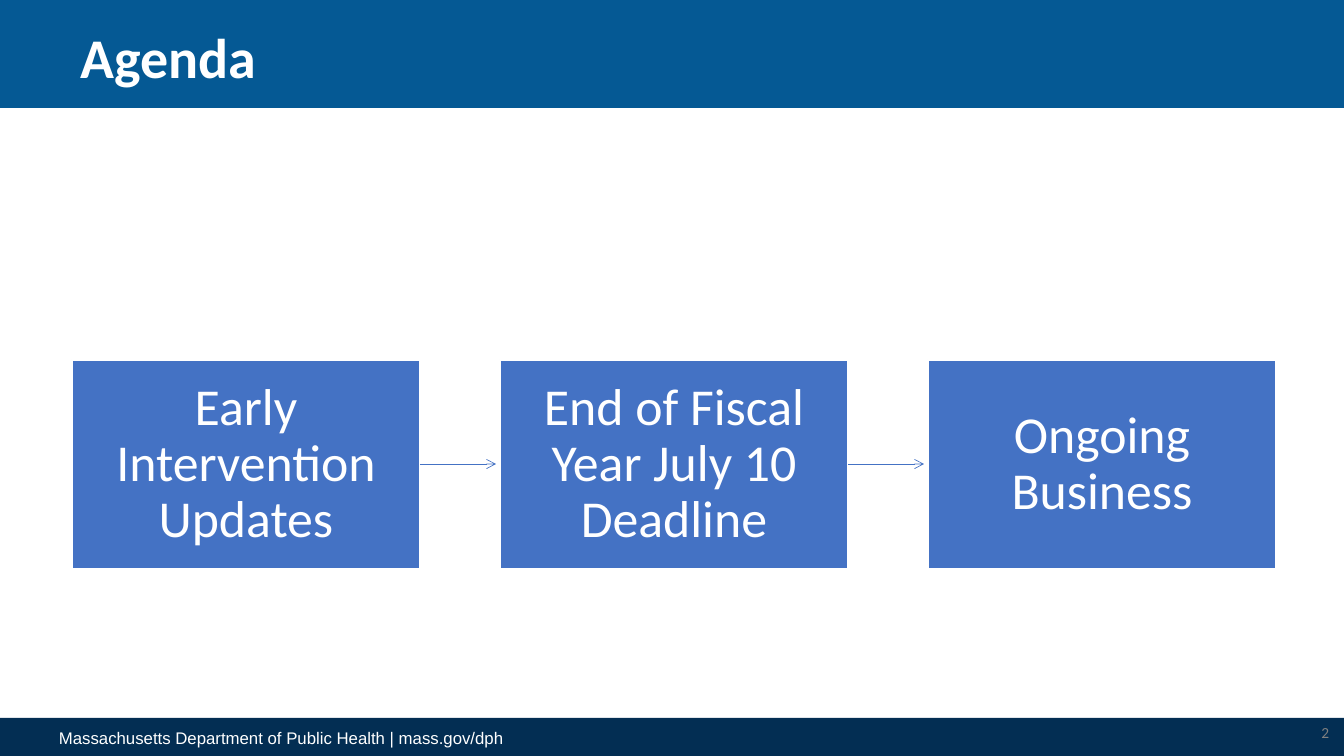
from dataclasses import dataclass

from pptx import Presentation
from pptx import util as u
from pptx.dml.color import RGBColor
from pptx.enum import shapes, text
from pptx.oxml.ns import qn
from lxml import etree

SCALE = 914400 / 100.8


@dataclass(frozen=True)
class Theme:
    header: str = "055994"
    footer: str = "032E53"
    step: str = "4472C4"
    light: str = "FFFFFF"
    muted: str = "808080"
    title_size: int = 40
    step_size: int = 37
    footer_size: int = 12
    number_size: int = 11
    body_font: str = "Calibri"
    footer_font: str = "Arial"


THEME = Theme()


def px(*lengths):
    return [round(n * SCALE) for n in lengths]


def rgb(value):
    return RGBColor.from_string(value)


def set_all(target, values):
    for name, value in values.items():
        setattr(target, name, value)


def add_rect(slide, box, fill, line=None):
    sp = slide.shapes.add_shape(shapes.MSO_SHAPE.RECTANGLE, *px(*box))
    sp.shadow.inherit = False
    sp.fill.solid()
    sp.fill.fore_color.rgb = rgb(fill)
    if line:
        sp.line.color.rgb = rgb(line)
        sp.line.width = u.Pt(1)
    else:
        sp.line.fill.background()
    return sp


def write(sp, words, size, color, font=THEME.body_font, bold=False,
          frame=None, para=None):
    tf = sp.text_frame
    set_all(tf, {"word_wrap": True,
                 "vertical_anchor": text.MSO_ANCHOR.MIDDLE, **(frame or {})})
    p = tf.paragraphs[0]
    set_all(p, para or {})
    r = p.add_run()
    r.text = words
    set_all(r.font, {"name": font, "size": u.Pt(size), "bold": bold})
    r.font.color.rgb = rgb(color)


def add_label(slide, box, words, size, color, **style):
    write(slide.shapes.add_textbox(*px(*box)), words, size, color, **style)


def add_arrow(slide, x, y, length):
    line = slide.shapes.add_connector(
        shapes.MSO_CONNECTOR.STRAIGHT, *px(x, y, x + length, y))
    line.line.color.rgb = rgb(THEME.step)
    line.line.width = u.Pt(0.5)
    etree.SubElement(line.line._get_or_add_ln(), qn("a:tailEnd"), type="arrow")
    etree.SubElement(line._element.spPr, qn("a:effectLst"))


def add_header(slide, box, title):
    x, y, w, h = box
    add_rect(slide, box, THEME.header)
    add_label(slide, (x + 71, y + 12, 1107, 97), title, THEME.title_size,
              THEME.light, bold=True, para={"line_spacing": 0.9})


def add_footer(slide, box, words, number):
    x, y, w, h = box
    add_rect(slide, box, THEME.footer)
    add_label(slide, (x + 49, y + 4, 555, 31), words, THEME.footer_size,
              THEME.light, font=THEME.footer_font)
    add_label(slide, (x + w - 54, y - 6, 49, 40), number, THEME.number_size,
              THEME.muted, para={"alignment": text.PP_ALIGN.RIGHT,
                                 "space_after": u.Pt(6)})


def add_steps(slide, box, steps, gap):
    x, y, w, h = box
    width = (w - gap * (len(steps) - 1)) // len(steps)
    side, edge = px(17, 18)
    frame = {"margin_left": side, "margin_right": side,
             "margin_top": edge, "margin_bottom": edge}
    para = {"alignment": text.PP_ALIGN.CENTER, "line_spacing": 0.9}
    for i, words in enumerate(steps):
        left = x + i * (width + gap)
        if i:
            add_arrow(slide, left - gap, y + h // 2, gap - 4)
        sp = add_rect(slide, (left, y, width, h), THEME.step, THEME.light)
        write(sp, words, THEME.step_size, THEME.light, frame=frame, para=para)


def main():
    prs = Presentation()
    prs.slide_width, prs.slide_height = px(1344, 756)
    slide = prs.slides.add_slide(prs.slide_layouts[6])
    add_header(slide, (0, 0, 1344, 108), "Agenda")
    add_steps(slide, (72, 360, 1204, 209),
              ["Early Intervention Updates",
               "End of Fiscal Year July 10 Deadline",
               "Ongoing Business"], gap=80)
    add_footer(slide, (0, 718, 1344, 38),
               "Massachusetts Department of Public Health | mass.gov/dph", "2")
    prs.save("out.pptx")


if __name__ == "__main__":
    main()
